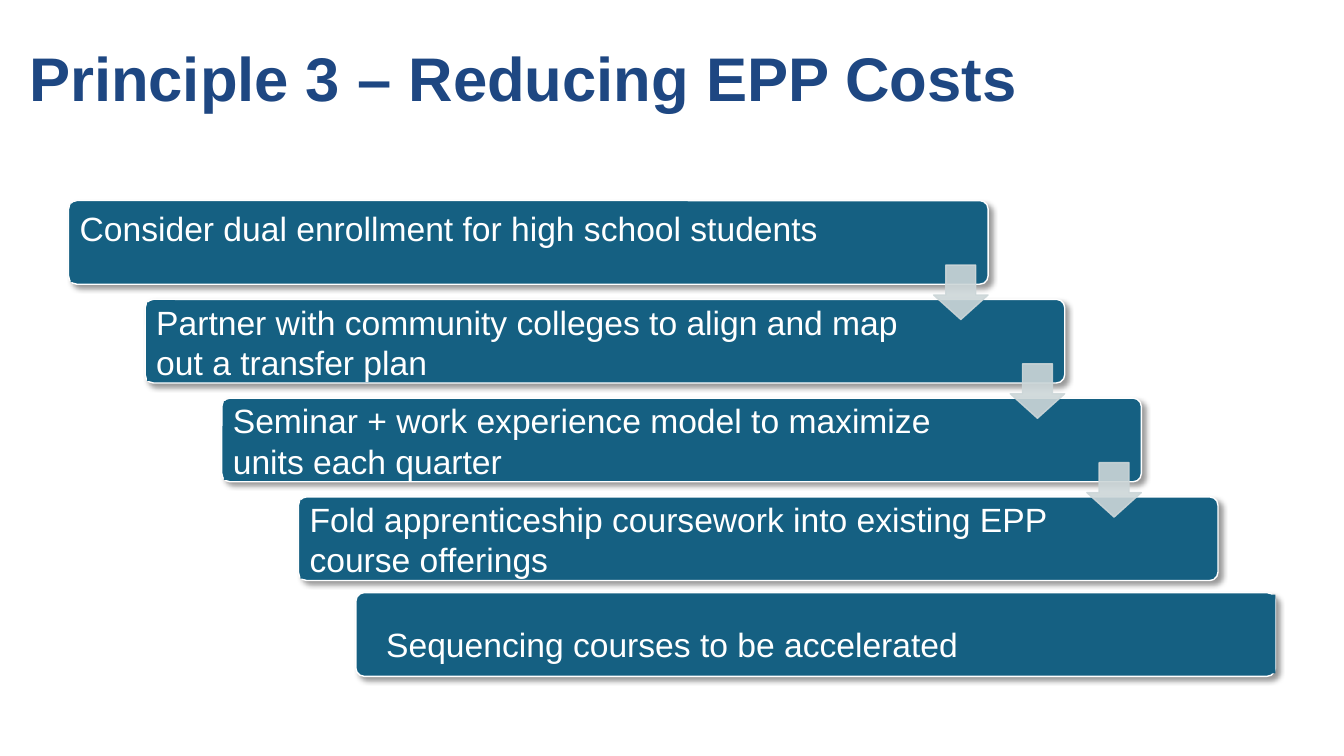
from dataclasses import dataclass

from lxml.etree import SubElement
from pptx import Presentation
from pptx.dml.color import RGBColor
from pptx.enum.shapes import MSO_SHAPE
from pptx.enum.text import MSO_ANCHOR, PP_ALIGN
from pptx.oxml.ns import qn
from pptx.shapes.autoshape import Shape
from pptx.slide import Slide
from pptx.util import Emu, Pt

PX = 9144
FONT = "Arial"
COLORS = {
    "title": "1E4782",
    "card": "156082",
    "arrow": "CCD6D8",
    "white": "FFFFFF",
    "shadow": "000000",
}
CARD_WIDTH, CARD_HEIGHT = 912, 83
LABEL_HEIGHT = 78
INSET = 9
FIRST_LEFT, FIRST_TOP = 68, 199
STEP_X, STEP_Y = 76, 98
ARROW_SIZE = 54
ARROW_DX, ARROW_DY = 858, 64


@dataclass(frozen=True)
class Step:
    text: str
    left: int
    top: int
    label_dx: int = 2
    label_dy: int = 3
    label_width: int = 777
    anchor: MSO_ANCHOR = MSO_ANCHOR.MIDDLE
    line_spacing: float = 1.0


def stair(index: int) -> tuple[int, int]:
    return FIRST_LEFT + index * STEP_X, FIRST_TOP + index * STEP_Y


STEPS = [
    Step("Consider dual enrollment for high school students", *stair(0),
         label_width=815, anchor=MSO_ANCHOR.TOP, line_spacing=0.9),
    Step("Partner with community colleges to align and map out a transfer plan", *stair(1)),
    Step("Seminar + work experience model to maximize units each quarter", *stair(2)),
    Step("Fold apprenticeship coursework into existing EPP course offerings", *stair(3)),
    Step("Sequencing courses to be accelerated", 353, 588, label_dx=21, label_dy=2,
         label_width=891, anchor=MSO_ANCHOR.BOTTOM, line_spacing=1.5),
]


def px(length: int) -> Emu:
    return Emu(length * PX)


def color(name: str) -> RGBColor:
    return RGBColor.from_string(COLORS[name])


def add_block(page: Slide, kind: MSO_SHAPE, left: int, top: int, width: int, height: int,
              fill: str, line: str, adjustments: list[float]) -> Shape:
    block = page.shapes.add_shape(kind, px(left), px(top), px(width), px(height))
    block.shadow.inherit = False
    block.fill.solid()
    block.fill.fore_color.rgb = color(fill)
    block.line.color.rgb = color(line)
    block.line.width = Pt(1)
    for index, value in enumerate(adjustments):
        block.adjustments[index] = value
    return block


def add_text(page: Slide, text: str, left: int, top: int, width: int, height: int, size: int,
             ink: str, anchor: MSO_ANCHOR, line_spacing: float, bold: bool = False) -> Shape:
    box = page.shapes.add_textbox(px(left), px(top), px(width), px(height))
    frame = box.text_frame
    frame.word_wrap = True
    frame.vertical_anchor = anchor
    para = frame.paragraphs[0]
    para.text = text
    para.alignment = PP_ALIGN.LEFT
    para.line_spacing = line_spacing
    para.font.name = FONT
    para.font.size = Pt(size)
    para.font.bold = bold
    para.font.color.rgb = color(ink)
    return box


def add_shadow(block: Shape) -> None:
    effects = block._element.spPr.find(qn("a:effectLst"))
    shadow = SubElement(effects, qn("a:outerShdw"), blurRad=str(Pt(4)), dist=str(Pt(3)),
                        dir="2700000", algn="tl", rotWithShape="0")
    tint = SubElement(shadow, qn("a:srgbClr"), val=COLORS["shadow"])
    SubElement(tint, qn("a:alpha"), val="40000")


def add_card(page: Slide, step: Step) -> None:
    card = add_block(page, MSO_SHAPE.ROUNDED_RECTANGLE, step.left, step.top,
                     CARD_WIDTH, CARD_HEIGHT, "card", "white", [0.1])
    add_shadow(card)
    label = add_text(page, step.text, step.left + step.label_dx, step.top + step.label_dy,
                     step.label_width, LABEL_HEIGHT, 24, "white", step.anchor, step.line_spacing)
    label.fill.solid()
    label.fill.fore_color.rgb = color("card")
    frame = label.text_frame
    frame.margin_left = frame.margin_right = px(INSET)
    frame.margin_top = frame.margin_bottom = px(INSET)


def add_arrow(page: Slide, step: Step) -> None:
    arrow = add_block(page, MSO_SHAPE.DOWN_ARROW, step.left + ARROW_DX, step.top + ARROW_DY,
                      ARROW_SIZE, ARROW_SIZE, "arrow", "arrow", [0.55, 0.45])
    for tint in arrow._element.spPr.iter(qn("a:srgbClr")):
        SubElement(tint, qn("a:alpha"), val="90000")


def main() -> None:
    deck = Presentation()
    deck.slide_width, deck.slide_height = px(1333), px(750)
    page = deck.slides.add_slide(deck.slide_layouts[6])
    add_text(page, "Principle 3 – Reducing EPP Costs", 19, 34, 1150, 94, 44, "title",
             MSO_ANCHOR.MIDDLE, 0.9, bold=True)
    for step in STEPS:
        add_card(page, step)
    for step in STEPS[:3]:
        add_arrow(page, step)
    deck.save("out.pptx")


if __name__ == "__main__":
    main()
